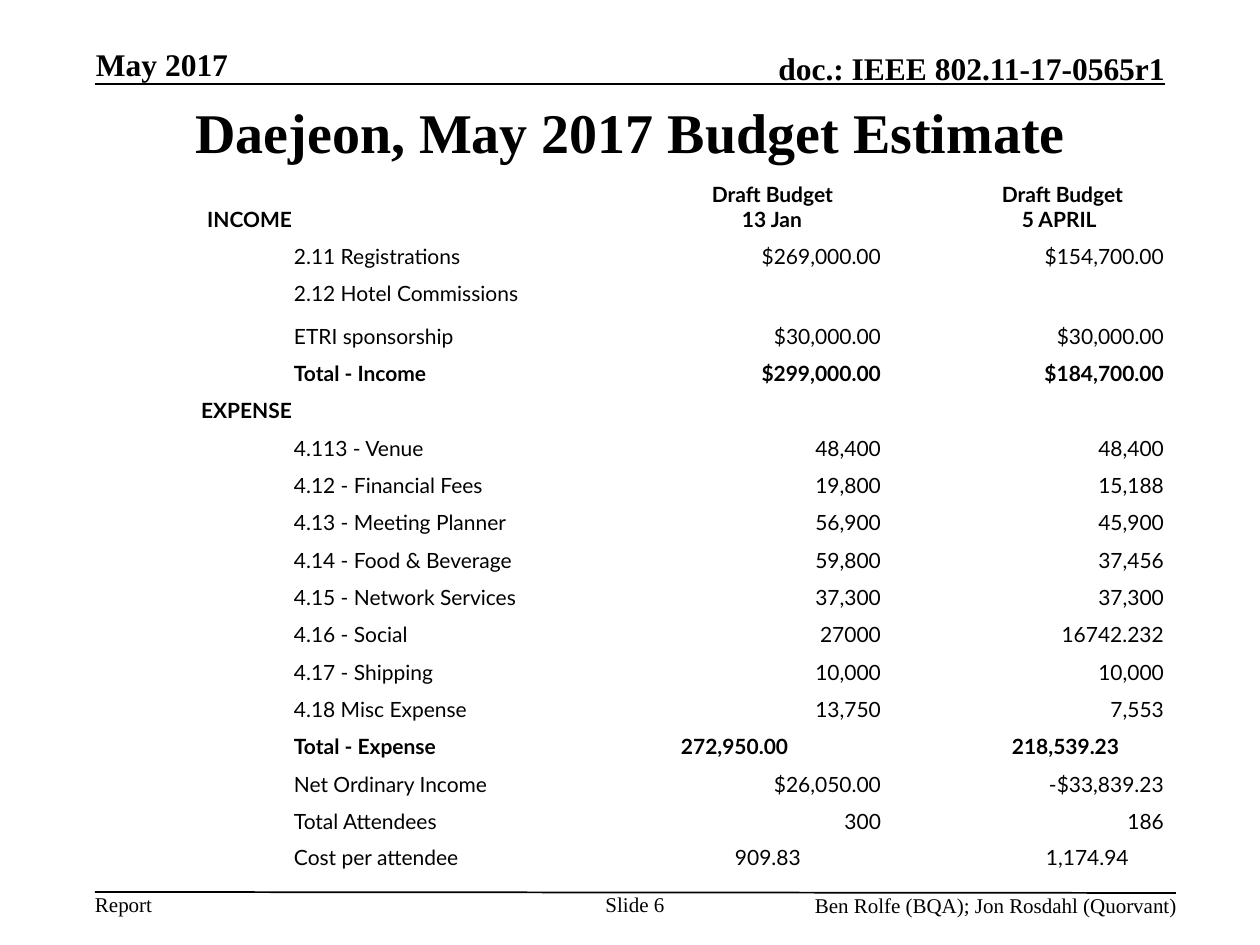
from pptx import Presentation
from pptx.dml.color import RGBColor
from pptx.enum.shapes import MSO_CONNECTOR
from pptx.enum.text import MSO_ANCHOR, PP_ALIGN
from pptx.oxml.ns import qn
from pptx.util import Emu, Pt
from lxml import etree

BLACK = RGBColor(0, 0, 0)
LEFT, MID, RIGHT = PP_ALIGN.LEFT, PP_ALIGN.CENTER, PP_ALIGN.RIGHT
TOP, CENTER, BOTTOM = MSO_ANCHOR.TOP, MSO_ANCHOR.MIDDLE, MSO_ANCHOR.BOTTOM
STRAIGHT = MSO_CONNECTOR.STRAIGHT
SERIF, SANS = "Times New Roman", "Lato"
SCALE = 914400 / 126

COLS = [188, 280, 309, 83, 200]
HEADS = [
    [("Draft Budget", 138), ("13 Jan", 168)],
    [("Draft Budget", 36), ("5 APRIL", 56)],
]
ITEMS = [
    ("2.11 Registrations", "$269,000.00", "$154,700.00"),
    ("2.12 Hotel Commissions", "", ""),
    ("ETRI sponsorship", "$30,000.00", "$30,000.00"),
    ("Total - Income", "$299,000.00", "$184,700.00"),
    ("EXPENSE", "", ""),
    ("4.113 - Venue", "48,400", "48,400"),
    ("4.12 - Financial Fees", "19,800", "15,188"),
    ("4.13 - Meeting Planner", "56,900", "45,900"),
    ("4.14 - Food & Beverage", "59,800", "37,456"),
    ("4.15 - Network Services", "37,300", "37,300"),
    ("4.16 - Social", "27000", "16742.232"),
    ("4.17 - Shipping", "10,000", "10,000"),
    ("4.18 Misc Expense", "13,750", "7,553"),
    ("Total - Expense", "272,950.00", "218,539.23"),
    ("Net Ordinary Income", "$26,050.00", "-$33,839.23"),
    ("Total Attendees", "300", "186"),
    ("Cost per attendee", "909.83", "1,174.94"),
]
INDENTS = {"Total - Expense": (107, 46), "Cost per attendee": (161, 80)}
BOLD = ("Total - Income", "Total - Expense")
TALL = "ETRI sponsorship"


def px(n):
    """Turn pixels into EMU."""
    return Emu(round(n * SCALE))


def style(para, size, face, bold=False, align=LEFT):
    """Format a paragraph and its runs."""
    para.alignment = align
    for run in para.runs:
        font = run.font
        font.size, font.name, font.bold = Pt(size), face, bold
        font.color.rgb = BLACK


def add_text(slide, box, text, size, bold=False, align=LEFT, anchor=TOP):
    """Add a text box without insets."""
    frame = slide.shapes.add_textbox(*map(px, box)).text_frame
    frame.word_wrap = True
    frame.vertical_anchor = anchor
    frame.margin_left = frame.margin_right = 0
    frame.margin_top = frame.margin_bottom = 0
    frame.text = text
    style(frame.paragraphs[0], size, SERIF, bold, align)


def add_rule(slide, *ends):
    """Add a thin black line."""
    line = slide.shapes.add_connector(STRAIGHT, *map(px, ends))
    line.line.color.rgb = BLACK
    line.line.width = Pt(1)
    etree.SubElement(line._element.spPr, qn("a:effectLst"))


def fill_cell(cell, parts, bold=False, align=LEFT):
    """Write pairs of text and indent, one to a paragraph."""
    frame = cell.text_frame
    frame.text = "\n".join(text for text, _ in parts)
    for para, (_, indent) in zip(frame.paragraphs, parts):
        style(para, 12, SANS, bold, align)
        if indent:
            para._p.get_or_add_pPr().set("marL", str(px(indent)))


def clear_cell(cell):
    """Give a cell its plain look and small empty text."""
    cell.fill.background()
    cell.vertical_anchor = BOTTOM
    cell.margin_left = cell.margin_right = cell.margin_top = px(1)
    cell.margin_bottom = 0
    end = cell.text_frame.paragraphs[0]._p.get_or_add_endParaRPr()
    end.set("sz", "1200")


def add_row(table, row, item):
    """Write a line of the budget."""
    name, *sums = item
    section = name.isupper()
    bold = section or name in BOLD
    fill_cell(table.cell(row, 0 if section else 1), [(name, 0)], bold,
              RIGHT if section else LEFT)
    indents = INDENTS.get(name, (0, 0))
    for col, value, indent in zip((2, 4), sums, indents):
        if value:
            fill_cell(table.cell(row, col), [(value, indent)], bold,
                      LEFT if indent else RIGHT)


def add_budget(slide):
    """Add the budget table."""
    shape = slide.shapes.add_table(len(ITEMS) + 1, len(COLS),
                                   *map(px, (105, 179, sum(COLS), 693)))
    table = shape.table
    table.first_row = table.horz_banding = False
    for col, width in zip(table.columns, COLS):
        col.width = px(width)
    for cell in table.iter_cells():
        clear_cell(cell)
    table.rows[0].height = px(53)
    fill_cell(table.cell(0, 0), [("INCOME", 0)], True, RIGHT)
    for col, head in zip((2, 4), HEADS):
        fill_cell(table.cell(0, col), head, True)
    for row, item in enumerate(ITEMS, 1):
        step = 38 if row % 3 == 0 else 37
        table.rows[row].height = px(43 if item[0] == TALL else step)
        add_row(table, row, item)


def main():
    """Build the slide."""
    deck = Presentation()
    deck.slide_width, deck.slide_height = px(1260), px(945)
    slide = deck.slides.add_slide(deck.slide_layouts[6])
    add_rule(slide, 95, 84, 1165, 84)
    add_rule(slide, 95, 892, 1176, 893)
    add_text(slide, (96, 45, 258, 38), "May 2017", 18, True, LEFT, BOTTOM)
    add_text(slide, (494, 49, 671, 38), "doc.: IEEE 802.11-17-0565r1",
             18, True, RIGHT, BOTTOM)
    add_text(slide, (95, 95, 1071, 73), "Daejeon, May 2017 Budget Estimate",
             32, True, MID, CENTER)
    add_budget(slide)
    add_text(slide, (95, 892, 120, 26), "Report", 12)
    add_text(slide, (598, 892, 74, 50), "Slide 6", 12, align=MID)
    add_text(slide, (777, 892, 400, 32),
             "Ben Rolfe (BQA); Jon Rosdahl (Quorvant)", 12, align=RIGHT)
    deck.save("out.pptx")


if __name__ == "__main__":
    main()
